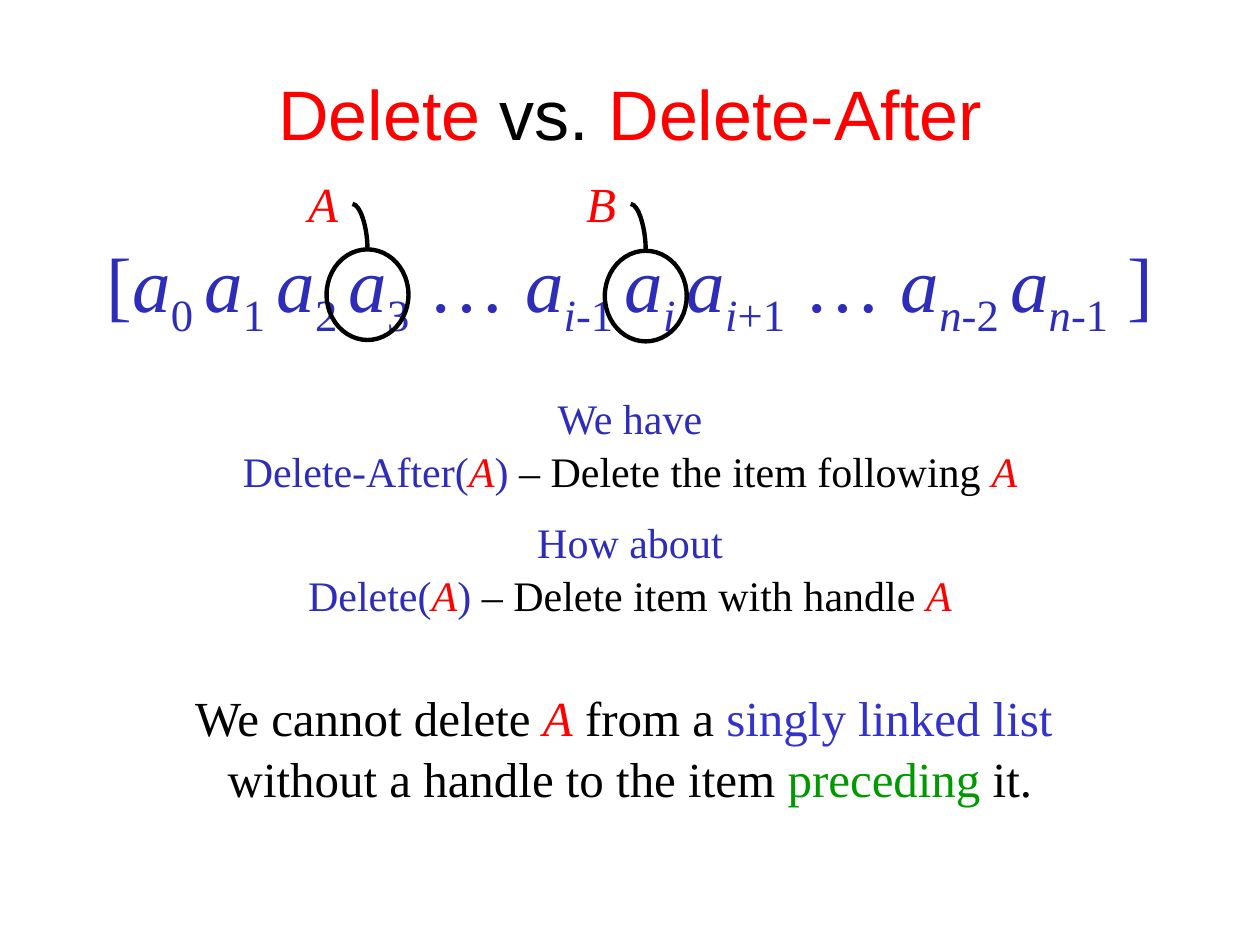
from lxml import etree
from pptx import Presentation
from pptx import util as u
from pptx.dml.color import RGBColor
from pptx.enum import shapes, text
from pptx.oxml.ns import qn

Pt = u.Pt
RED = RGBColor(0xFF, 0x00, 0x00)
BLACK = RGBColor(0x00, 0x00, 0x00)
NAVY = RGBColor(0x2D, 0x2D, 0xB9)
BLUE = RGBColor(0x33, 0x33, 0xCC)
GREEN = RGBColor(0x00, 0x99, 0x00)
SERIF = "Times New Roman"
WIDTH, HEIGHT = 720, 540


class ListSlide:
    def __init__(self, deck):
        self.slide = deck.slides.add_slide(deck.slide_layouts[6])
        self.stroke = 2.5

    def text(self, left, top, width, height, lines, size, font=SERIF,
             anchor=text.MSO_ANCHOR.TOP):
        """Each line is a list of (words, colour, marks); marks: i italic, _ subscript."""
        box = self.slide.shapes.add_textbox(Pt(left), Pt(top), Pt(width), Pt(height))
        frame = box.text_frame
        frame.word_wrap = True
        frame.vertical_anchor = anchor
        for number, pieces in enumerate(lines):
            line = frame.add_paragraph() if number else frame.paragraphs[0]
            line.alignment = text.PP_ALIGN.CENTER
            line.font.size = Pt(size)
            line.font.name = font
            if font == SERIF:
                line.line_spacing = 1.05
            for words, colour, marks in pieces:
                if words == "\n":
                    line.add_line_break()
                    continue
                run = line.add_run()
                run.text = words
                run.font.size = Pt(size)
                run.font.name = font
                run.font.color.rgb = colour
                run.font.italic = "i" in marks
                if "_" in marks:
                    run.font._element.set("baseline", "-25000")

    def ring(self, left, top, width, height):
        ring = self.slide.shapes.add_shape(
            shapes.MSO_SHAPE.OVAL, Pt(left), Pt(top), Pt(width), Pt(height))
        ring.shadow.inherit = False
        ring.fill.background()
        ring.line.color.rgb = BLACK
        ring.line.width = Pt(self.stroke)

    def curve(self, x1, y1, x2, y2):
        """Quarter curve that leaves sideways and arrives from above."""
        curve = self.slide.shapes.add_connector(
            shapes.MSO_CONNECTOR.CURVE, Pt(x1), Pt(y1), Pt(x2), Pt(y2))
        curve.line.color.rgb = BLACK
        curve.line.width = Pt(self.stroke)
        properties = curve._element.spPr
        properties.find(qn("a:prstGeom")).set("prst", "curvedConnector2")
        etree.SubElement(properties, qn("a:effectLst"))

    def handle(self, name, left, ring_top):
        """Red name with a curve down to the ring round its item."""
        ring_left, ring_width = left + 20.4, 46.8
        middle = ring_left + ring_width / 2
        self.ring(ring_left, ring_top, ring_width, 51.8)
        self.curve(middle - 8.6, 116.6, middle, ring_top)
        self.text(left, 93.8, 36.7, 41, [[(name, RED, "i")]], 28)


def item(*index):
    return [("a", NAVY, "i")] + [(part, NAVY, marks) for part, marks in index]


def operation(intro, name, effect):
    return [
        [(intro, NAVY, "")],
        [(name + "(", NAVY, ""), ("A", RED, "i"), (") ", NAVY, ""),
         (f"– {effect} ", BLACK, ""), ("A", RED, "i")],
    ]


def main():
    deck = Presentation()
    deck.slide_width, deck.slide_height = Pt(WIDTH), Pt(HEIGHT)
    page = ListSlide(deck)

    page.text(0, 29, WIDTH, 70.6,
              [[("Delete ", RED, ""), ("vs.", BLACK, ""), (" Delete-After", RED, "")]],
              40, "Arial", text.MSO_ANCHOR.MIDDLE)

    dots = [(" … ", NAVY, "")]
    array = [("[", NAVY, "")]
    for digit in ("0 ", "1 ", "2 ", "3"):
        array += item((digit, "_"))
    array += dots + item(("i", "i_"), ("-1 ", "_")) + item(("i ", "i_"))
    array += item(("i", "i_"), ("+1", "_")) + dots
    array += item(("n", "i_"), ("-2 ", "_")) + item(("n", "i_"), ("-1", "_"))
    array.append((" ]", NAVY, ""))
    page.text(0, 128.2, WIDTH, 96.5, [array], 44)

    page.handle("A", 166.2, 142.5)
    page.handle("B", 325.2, 143.3)

    page.text(0, 219.6, WIDTH, 65.5,
              operation("We have", "Delete-After", "Delete the item following"), 24)
    page.text(0, 290.2, WIDTH, 65.5,
              operation("How about", "Delete", "Delete item with handle"), 24)
    page.text(0, 387.4, WIDTH, 74.9,
              [[("We cannot delete ", BLACK, ""), ("A", RED, "i"), (" from a ", BLACK, ""),
                ("singly linked list ", BLUE, ""), ("\n", BLACK, ""),
                ("without a handle to the item ", BLACK, ""),
                ("preceding", GREEN, ""), (" it.", BLACK, "")]], 28)

    deck.save("out.pptx")


if __name__ == "__main__":
    main()
